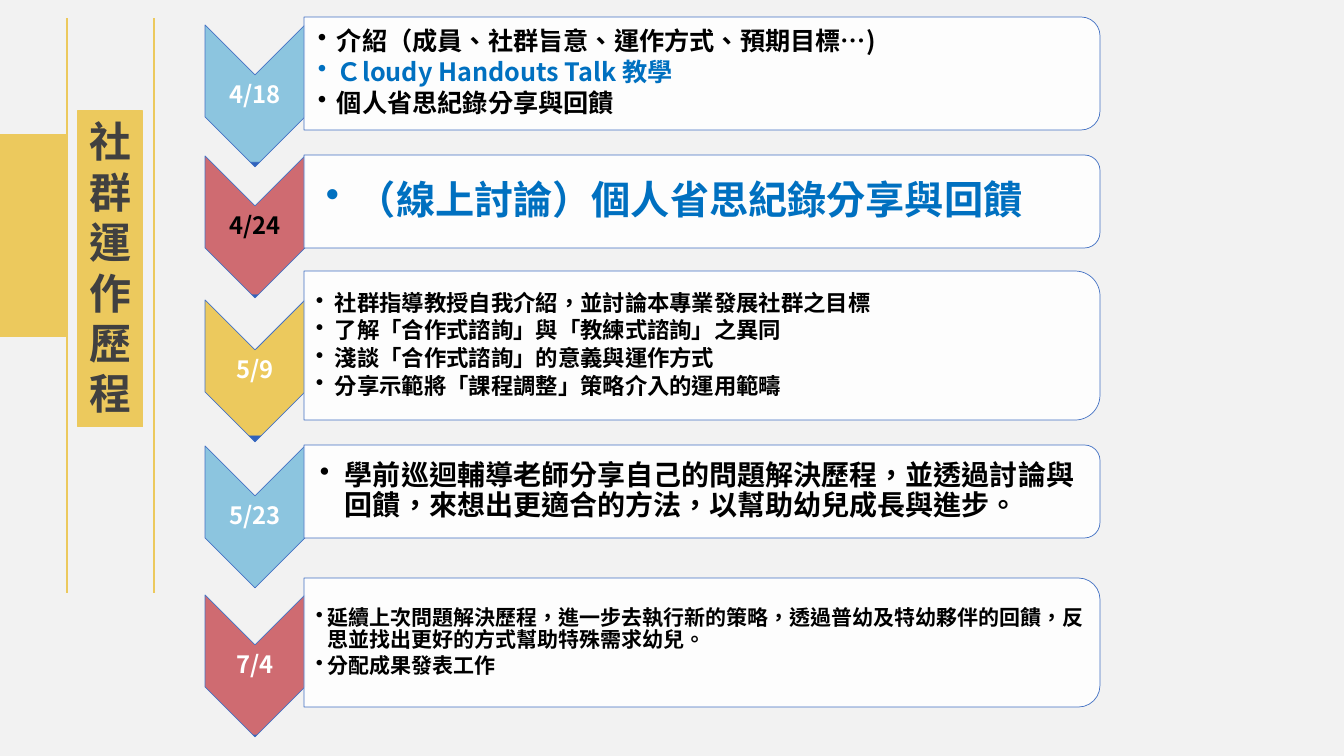
from lxml import etree
from pptx import Presentation
from pptx import util as u
from pptx.dml.color import RGBColor
from pptx.enum import shapes, text
from pptx.oxml.ns import qn

PX = 914400 / 100.8
FONT = "Noto Sans CJK SC"
PAPER = RGBColor(0xF2, 0xF2, 0xF2)
WHITE = RGBColor(0xFF, 0xFF, 0xFF)
BLACK = RGBColor(0, 0, 0)
GREY = RGBColor(0x40, 0x40, 0x40)
GOLD = RGBColor(0xEC, 0xC9, 0x5D)
SKY = RGBColor(0x8C, 0xC5, 0xDF)
ROSE = RGBColor(0xCF, 0x6B, 0x71)
TIP = RGBColor(0x30, 0x62, 0xBB)
EDGE = RGBColor(0x44, 0x72, 0xC4)
LINK = RGBColor(0x00, 0x70, 0xC0)

CHEVRON_LEFT, CHEVRON_WIDTH, CHEVRON_HEIGHT = 205, 100, 142
CARD_LEFT, CARD_WIDTH, CARD_TEXT_WIDTH = 304, 796, 791

# date, date colour, chevron colour, chevron top, gradient stop,
# card top, card height, text size, inset, indent, items
MEETINGS = [
    ("4/18", WHITE, SKY, 25, 0.96, 17, 113, 18, 14, 19, [
        ("介紹（成員、社群旨意、運作方式、預期目標…)", BLACK),
        ("Ｃloudy Handouts Talk 教學", LINK),
        ("個人省思紀錄分享與回饋", BLACK)]),
    ("4/24", BLACK, ROSE, 156, 0.97, 155, 93, 28, 22, 31, [
        ("（線上討論）個人省思紀錄分享與回饋", LINK)]),
    ("5/9", WHITE, GOLD, 300, 0.95, 271, 149, 16, 12, 19, [
        ("社群指導教授自我介紹，並討論本專業發展社群之目標", BLACK),
        ("了解「合作式諮詢」與「教練式諮詢」之異同", BLACK),
        ("淺談「合作式諮詢」的意義與運作方式", BLACK),
        ("分享示範將「課程調整」策略介入的運用範疇", BLACK)]),
    ("5/23", WHITE, SKY, 446, 0.99, 445, 93, 20, 16, 25, [
        ("學前巡迴輔導老師分享自己的問題解決歷程，並透過討論與回饋，"
         "來想出更適合的方法，以幫助幼兒成長與進步。", BLACK)]),
    ("7/4", WHITE, ROSE, 595, 0.98, 578, 129, 15, 12, 12, [
        ("延續上次問題解決歷程，進一步去執行新的策略，透過普幼及特幼夥伴的回饋，"
         "反思並找出更好的方式幫助特殊需求幼兒。", BLACK),
        ("分配成果發表工作", BLACK)]),
]


def px(length):
    """Turn pixels into EMU."""
    return u.Emu(round(length * PX))


def add_run(paragraph, words, size, color):
    """Add one bold run in the slide font."""
    run = paragraph.add_run()
    run.text = words
    run.font.size = u.Pt(size)
    run.font.bold = True
    run.font.name = FONT
    run.font.color.rgb = color
    props = run.font._element
    props.set("lang", "zh-TW")
    etree.SubElement(props, qn("a:ea")).set("typeface", FONT)


def add_outline(slide, kind, left, top, width, height, line, weight):
    """Add a preset shape with a thin outline and no shadow."""
    shape = slide.shapes.add_shape(kind, px(left), px(top), px(width), px(height))
    shape.shadow.inherit = False
    shape.line.color.rgb = line
    shape.line.width = u.Pt(weight)
    return shape


def add_turned(slide, kind, left, top, width, height):
    """Add a shape turned by 90 degrees that covers the given area."""
    shift = (width - height) / 2
    shape = add_outline(slide, kind, left + shift, top - shift, height, width, EDGE, 0.5)
    shape.rotation = 90
    return shape


def add_block(slide, left, top, width, height):
    """Add a solid gold rectangle."""
    block = add_outline(slide, shapes.MSO_SHAPE.RECTANGLE, left, top, width, height, GOLD, 0.75)
    block.fill.solid()
    block.fill.fore_color.rgb = GOLD
    return block


def add_rail(slide, x):
    """Add a vertical gold line beside the title."""
    rail = slide.shapes.add_connector(
        shapes.MSO_CONNECTOR.STRAIGHT, px(x), px(593), px(x), px(18))
    rail.line.color.rgb = GOLD
    rail.line.width = u.Pt(2)
    etree.SubElement(rail._element.spPr, qn("a:effectLst"))


def add_frame(slide, left, top, width, height, inset):
    """Add a wrapping, vertically centred text box and return its frame."""
    frame = slide.shapes.add_textbox(px(left), px(top), px(width), px(height)).text_frame
    frame.word_wrap = True
    frame.vertical_anchor = text.MSO_ANCHOR.MIDDLE
    frame.margin_left = px(inset)
    frame.margin_top = frame.margin_right = frame.margin_bottom = px(1)
    return frame


def add_title(slide):
    """Add the column title, one character to a line."""
    frame = add_block(slide, 78, 111, 65, 316).text_frame
    frame.word_wrap = True
    frame.vertical_anchor = text.MSO_ANCHOR.TOP
    paragraph = frame.paragraphs[0]
    paragraph.alignment = text.PP_ALIGN.CENTER
    add_run(paragraph, "社群運作歷程", 30, GREY)


def add_date(slide, date, date_color, color, top, stop):
    """Add a downward chevron with its date."""
    chevron = add_turned(slide, shapes.MSO_SHAPE.CHEVRON,
                         CHEVRON_LEFT, top, CHEVRON_WIDTH, CHEVRON_HEIGHT)
    chevron.fill.gradient()
    chevron.fill.gradient_angle = 270
    chevron._element.spPr.find(qn("a:gradFill")).set("rotWithShape", "0")
    stops = chevron.fill.gradient_stops
    for gradient_stop, position, shade in zip(stops, (stop, stop + 0.01), (color, TIP)):
        gradient_stop.position = position
        gradient_stop.color.rgb = shade
    paragraph = add_frame(slide, CHEVRON_LEFT, top + 50, CHEVRON_WIDTH, 42, 1).paragraphs[0]
    paragraph.alignment = text.PP_ALIGN.CENTER
    paragraph.line_spacing = 0.9
    add_run(paragraph, date, 17, date_color)


def add_card(slide, top, height, size, inset, indent, items):
    """Add a white card with its bulleted items."""
    card = add_turned(slide, shapes.MSO_SHAPE.ROUND_2_SAME_RECTANGLE,
                      CARD_LEFT, top, CARD_WIDTH, height)
    card.fill.solid()
    card.fill.fore_color.rgb = WHITE
    tint = card._element.spPr.find(qn("a:solidFill"))[0]
    etree.SubElement(tint, qn("a:alpha")).set("val", "90000")
    frame = add_frame(slide, CARD_LEFT, top + 5, CARD_TEXT_WIDTH, height - 10, inset)
    for index, (words, color) in enumerate(items):
        paragraph = frame.add_paragraph() if index else frame.paragraphs[0]
        paragraph.line_spacing = 0.9
        paragraph.space_after = u.Pt(size * 0.15)
        props = paragraph._p.get_or_add_pPr()
        props.set("marL", str(px(indent)))
        props.set("indent", str(-px(indent)))
        etree.SubElement(props, qn("a:buChar")).set("char", "•")
        add_run(paragraph, words, size, color)


def main():
    """Build the slide and save it."""
    deck = Presentation()
    deck.slide_width, deck.slide_height = px(1344), px(756)
    slide = deck.slides.add_slide(deck.slide_layouts[6])
    slide.background.fill.solid()
    slide.background.fill.fore_color.rgb = PAPER
    add_rail(slide, 154)
    add_title(slide)
    add_block(slide, 0, 135, 67, 202)
    add_rail(slide, 67)
    for date, date_color, color, chevron_top, stop, *card in MEETINGS:
        add_date(slide, date, date_color, color, chevron_top, stop)
        add_card(slide, *card)
    deck.save("out.pptx")


if __name__ == "__main__":
    main()
